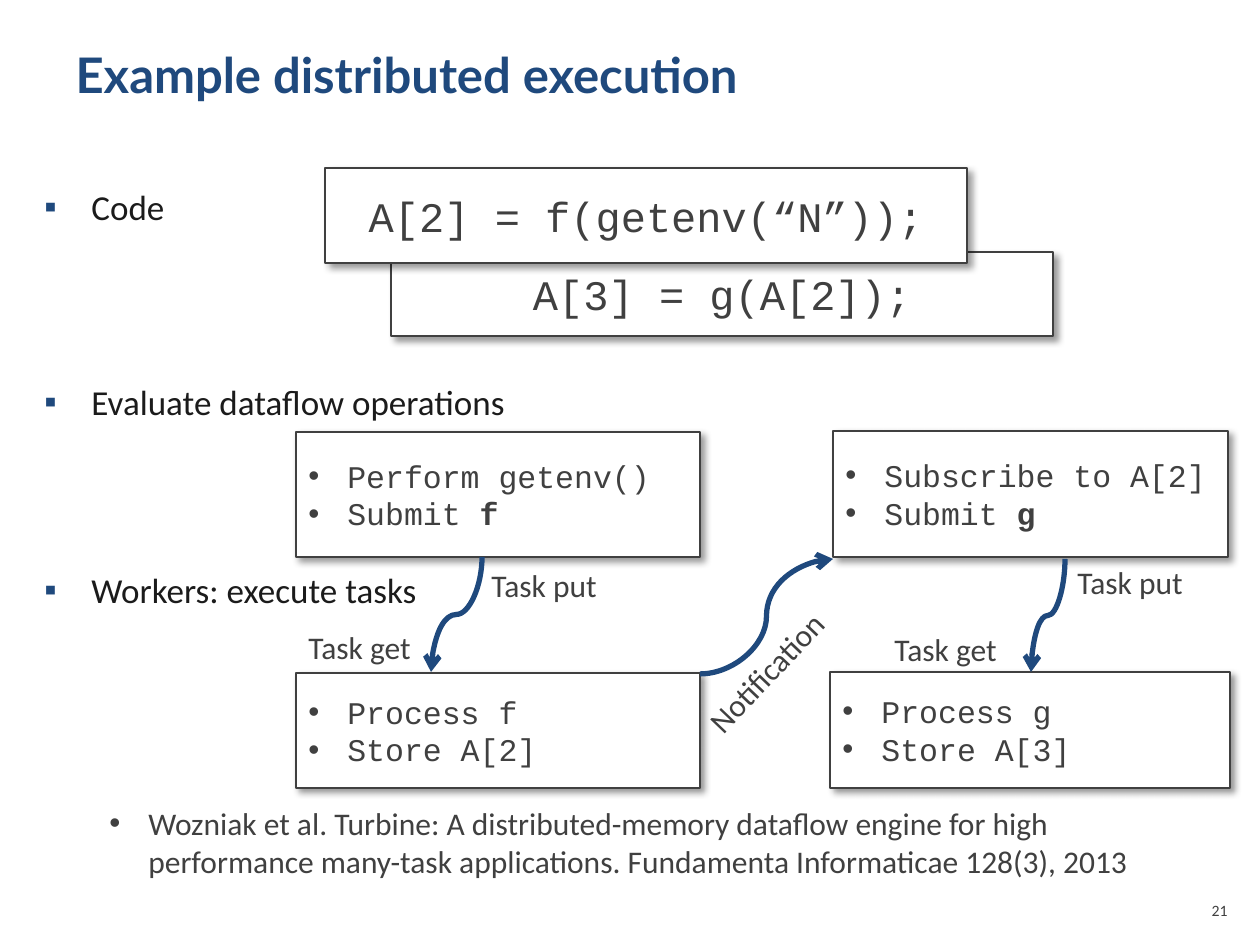
from lxml.etree import SubElement
from pptx import Presentation
from pptx.dml.color import RGBColor
from pptx.enum.shapes import MSO_CONNECTOR, MSO_SHAPE
from pptx.enum.text import MSO_ANCHOR, PP_ALIGN
from pptx.oxml.ns import qn
from pptx.util import Emu, Pt

PIXELS_PER_INCH = 126
NAVY = "1F497D"
GREY = "404040"
BLACK = "1B1B1B"
WHITE = "FFFFFF"
CODE_FONT = "Courier New"
BODY_FONT = "Calibri"


def px(value):
    return Emu(round(value * 914400 / PIXELS_PER_INCH))


def color(value):
    return RGBColor.from_string(value)


def set_font(paragraph, name, size, hex_color, bold=False):
    paragraph.font.name = name
    paragraph.font.size = Pt(size)
    paragraph.font.bold = bold
    paragraph.font.color.rgb = color(hex_color)


def add_bullet(paragraph, character, indent, hex_color):
    properties = paragraph._p.get_or_add_pPr()
    properties.set("marL", str(px(indent)))
    properties.set("indent", str(-px(indent)))
    bullet_color = SubElement(properties, qn("a:buClr"))
    SubElement(bullet_color, qn("a:srgbClr"), val=hex_color)
    SubElement(properties, qn("a:buFont"), typeface="Arial")
    SubElement(properties, qn("a:buChar"), char=character)


def add_shadow(shape):
    effects = SubElement(shape._element.spPr, qn("a:effectLst"))
    shadow = SubElement(effects, qn("a:outerShdw"), blurRad=str(Pt(4)), dist=str(Pt(3)),
                        dir="2700000", algn="tl", rotWithShape="0")
    shadow_color = SubElement(shadow, qn("a:srgbClr"), val="000000")
    SubElement(shadow_color, qn("a:alpha"), val="40000")


def add_box(slide, left, top, width, height):
    shape = slide.shapes.add_shape(MSO_SHAPE.RECTANGLE, px(left), px(top), px(width), px(height))
    shape.fill.solid()
    shape.fill.fore_color.rgb = color(WHITE)
    shape.line.color.rgb = color(GREY)
    shape.line.width = Pt(0.75)
    add_shadow(shape)
    shape.text_frame.word_wrap = True
    shape.text_frame.vertical_anchor = MSO_ANCHOR.MIDDLE
    return shape


def add_code_box(slide, bounds, code):
    paragraph = add_box(slide, *bounds).text_frame.paragraphs[0]
    paragraph.text = code
    paragraph.alignment = PP_ALIGN.CENTER
    set_font(paragraph, CODE_FONT, 24, GREY)


def add_step_box(slide, bounds, steps):
    frame = add_box(slide, *bounds).text_frame
    for index, (text, function_name) in enumerate(steps):
        paragraph = frame.add_paragraph() if index else frame.paragraphs[0]
        paragraph.alignment = PP_ALIGN.LEFT
        add_bullet(paragraph, "•", 39, GREY)
        set_font(paragraph, CODE_FONT, 18, GREY)
        paragraph.add_run().text = text
        if function_name:
            run = paragraph.add_run()
            run.text = function_name
            run.font.bold = True


def add_text(slide, bounds, text, size=18, wrap=False, rotation=0):
    shape = slide.shapes.add_textbox(*map(px, bounds))
    shape.rotation = rotation
    shape.text_frame.word_wrap = wrap
    paragraph = shape.text_frame.paragraphs[0]
    paragraph.text = text
    set_font(paragraph, BODY_FONT, size, GREY)
    return paragraph


def add_citation(slide, bounds, text):
    paragraph = add_text(slide, bounds, "", wrap=True)
    properties = paragraph._p.get_or_add_pPr()
    properties.clear()
    add_bullet(paragraph, "•", 39, GREY)
    set_font(paragraph, BODY_FONT, 18, GREY)
    paragraph.add_run().text = text


def add_outline(slide, bounds, items):
    frame = slide.shapes.add_textbox(*map(px, bounds)).text_frame
    frame.word_wrap = True
    for index, (text, space_before) in enumerate(items):
        paragraph = frame.add_paragraph() if index else frame.paragraphs[0]
        paragraph.space_before = Pt(space_before)
        add_bullet(paragraph, "▪", 47, NAVY)
        set_font(paragraph, BODY_FONT, 20, BLACK)
        paragraph.add_run().text = text


def add_curve(slide, start, end):
    connector = slide.shapes.add_connector(MSO_CONNECTOR.CURVE, *map(px, start + end))
    connector.line.color.rgb = color(NAVY)
    connector.line.width = Pt(3)
    line = connector.line._get_or_add_ln()
    SubElement(line, qn("a:tailEnd"), type="arrow")
    SubElement(connector._element.spPr, qn("a:effectLst"))
    return connector


def add_downward_curve(slide, start, end):
    center_x = (start[0] + end[0]) / 2
    center_y = (start[1] + end[1]) / 2
    half_length = (end[1] - start[1]) / 2
    half_shift = (start[0] - end[0]) / 2
    connector = add_curve(slide, (center_x - half_length, center_y - half_shift),
                          (center_x + half_length, center_y + half_shift))
    connector._element.spPr.find(qn("a:xfrm")).set("rot", "5400000")


def set_title(slide, bounds, text):
    title = slide.shapes.title
    title.left, title.top, title.width, title.height = map(px, bounds)
    title.text_frame.vertical_anchor = MSO_ANCHOR.TOP
    paragraph = title.text_frame.paragraphs[0]
    paragraph.text = text
    paragraph.alignment = PP_ALIGN.LEFT
    set_font(paragraph, "Lato", 28, NAVY, bold=True)


def main():
    presentation = Presentation()
    presentation.slide_width = px(1260)
    presentation.slide_height = px(945)
    slide = presentation.slides.add_slide(presentation.slide_layouts[5])

    set_title(slide, (63, 38, 1134, 158), "Example distributed execution")
    add_code_box(slide, (391, 252, 662, 84), "A[3] = g(A[2]);")
    add_outline(slide, (32, 179, 1166, 624), [
        ("Code", 0),
        ("Evaluate dataflow operations", 87.6),
        ("Workers: execute tasks", 83.6),
    ])
    number = add_text(slide, (1187, 895, 53, 50), "21", size=9, wrap=True)
    number.alignment = PP_ALIGN.RIGHT
    add_code_box(slide, (325, 168, 642, 95), "A[2] = f(getenv(“N”));")

    for bounds, steps in [
        ((296, 432, 404, 125), [("Perform getenv()", ""), ("Submit ", "f")]),
        ((296, 673, 404, 115), [("Process f", ""), ("Store A[2]", "")]),
        ((833, 431, 395, 126), [("Subscribe to A[2]", ""), ("Submit ", "g")]),
        ((830, 672, 400, 116), [("Process g", ""), ("Store A[3]", "")]),
    ]:
        add_step_box(slide, bounds, steps)

    add_downward_curve(slide, (482, 557), (431, 672))
    add_downward_curve(slide, (1065, 559), (1031, 672))

    for left, top, text in [
        (479, 560, "Task put"),
        (1065, 557, "Task put"),
        (296, 622, "Task get"),
        (882, 624, "Task get"),
    ]:
        add_text(slide, (left, top, 131, 50), text)
    add_text(slide, (678, 646, 178, 50), "Notification", rotation=313.6)
    add_citation(slide, (97, 798, 1080, 89),
                 "Wozniak et al. Turbine: A distributed-memory dataflow engine for high performance "
                 "many-task applications. Fundamenta Informaticae 128(3), 2013")
    add_curve(slide, (700, 674), (833, 559))

    presentation.save("out.pptx")


if __name__ == "__main__":
    main()
